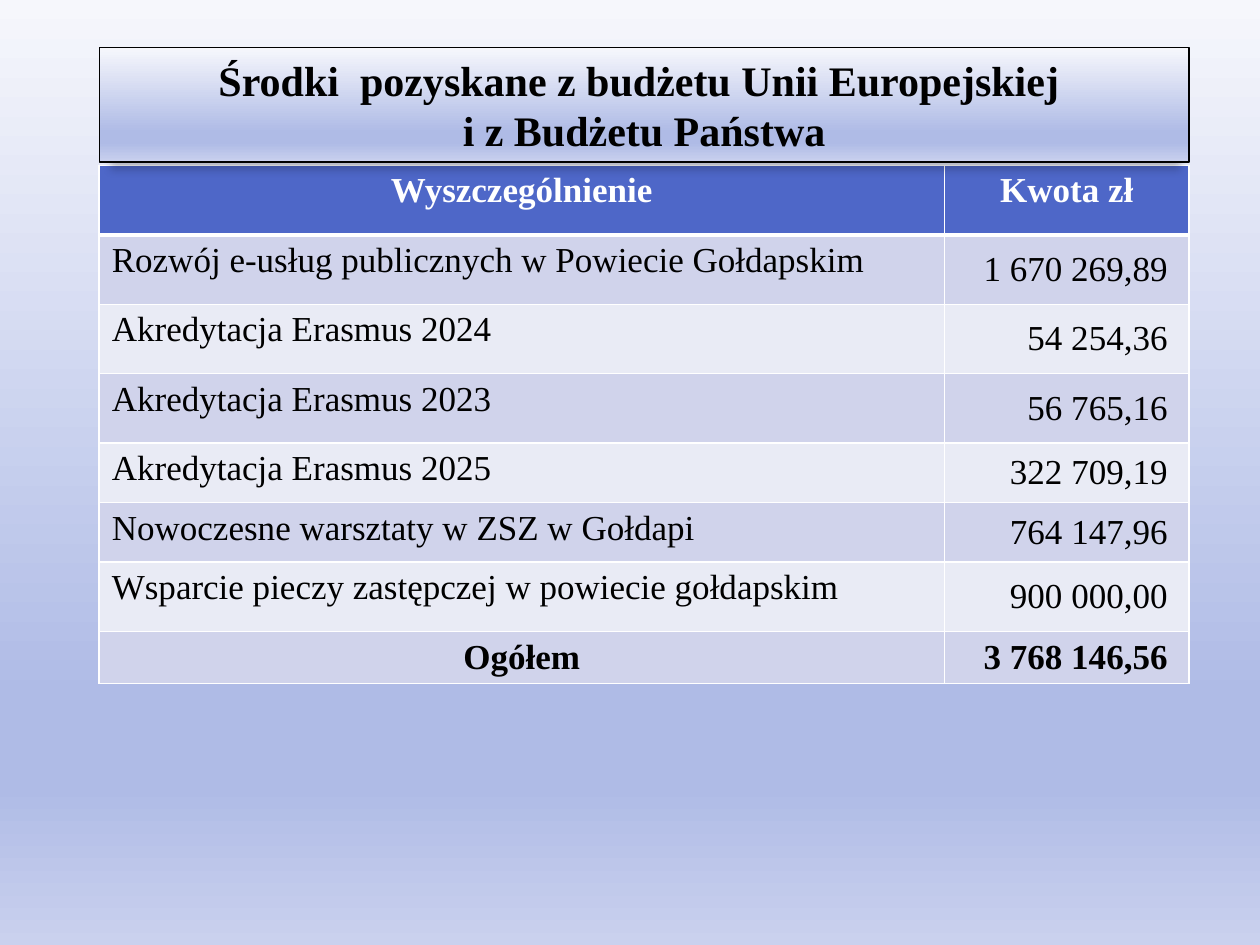
"""Build a slide listing funds obtained from the EU and state budgets."""
import pptx
import pptx.dml.color
import pptx.enum.shapes
import pptx.enum.text
import pptx.oxml
import pptx.oxml.ns
import pptx.util

Pt = pptx.util.Pt
RGBColor = pptx.dml.color.RGBColor
ALIGN = pptx.enum.text.PP_ALIGN
ANCHOR = pptx.enum.text.MSO_ANCHOR

TITLE = ("Środki  pozyskane z budżetu Unii Europejskiej ", "i z Budżetu Państwa")
ROWS = [
    ("Wyszczególnienie", "Kwota zł", 39.7),
    ("Rozwój e-usług publicznych w Powiecie Gołdapskim", "1 670 269,89 ", 39.7),
    ("Akredytacja Erasmus 2024", "54 254,36 ", 39.7),
    ("Akredytacja Erasmus 2023", "56 765,16 ", 39.7),
    ("Akredytacja Erasmus 2025", "322 709,19 ", 34),
    ("Nowoczesne warsztaty w ZSZ w Gołdapi", "764 147,96 ", 34),
    ("Wsparcie pieczy zastępczej w powiecie gołdapskim", "900 000,00 ", 39.7),
    ("Ogółem", "3 768 146,56 ", 29.7),
]
COLUMN_WIDTHS = (483, 139.8)
LEFT, TITLE_TOP, TITLE_HEIGHT, TABLE_TOP = 56.7, 27.2, 65.4, 94.5
FONT = "Times New Roman"
BLACK = RGBColor(0x00, 0x00, 0x00)
WHITE = RGBColor(0xFF, 0xFF, 0xFF)
HEADER_BLUE = RGBColor(0x4E, 0x67, 0xC8)
BANDS = (RGBColor(0xE9, 0xEB, 0xF5), RGBColor(0xD0, 0xD3, 0xEB))
GRADIENT = [
    (0, RGBColor(0xF6, 0xF7, 0xFC)),
    (74, RGBColor(0xAF, 0xBB, 0xE6)),
    (83, RGBColor(0xAF, 0xBB, 0xE6)),
    (100, RGBColor(0xCA, 0xD1, 0xEE)),
]
NAMESPACE = pptx.oxml.ns.nsdecls("a")


def apply_gradient(fill, owner):
    """Fill a shape or background with the vertical gradient."""
    fill.gradient()
    fill.gradient_angle = 270
    stops = next(owner.element.iter(pptx.oxml.ns.qn("a:gsLst")))
    for stop in list(stops):
        stops.remove(stop)
    for position, color in GRADIENT:
        stops.append(pptx.oxml.parse_xml(
            f'<a:gs {NAMESPACE} pos="{position * 1000}"><a:srgbClr val="{color}"/></a:gs>'))


def style_font(font, size, color, bold):
    """Set the typeface, size, colour and weight of a font."""
    font.name, font.size, font.bold = FONT, Pt(size), bold
    font.color.rgb = color


def add_borders(cell, row):
    """Draw white cell borders, thicker below the header row."""
    widths = {"L": 1, "R": 1, "T": 3 if row == 1 else 1, "B": 3 if row == 0 else 1}
    properties = cell._tc.get_or_add_tcPr()
    for side, width in widths.items():
        properties.append(pptx.oxml.parse_xml(
            f'<a:ln{side} {NAMESPACE} w="{Pt(width)}"><a:solidFill>'
            f'<a:srgbClr val="{WHITE}"/></a:solidFill></a:ln{side}>'))


def add_funds_table(page):
    """Add the table of projects and amounts."""
    table = page.shapes.add_table(
        len(ROWS), len(COLUMN_WIDTHS), Pt(LEFT), Pt(TABLE_TOP),
        Pt(sum(COLUMN_WIDTHS)), Pt(sum(row[-1] for row in ROWS))).table
    for column, width in zip(table.columns, COLUMN_WIDTHS):
        column.width = Pt(width)
    for row, (project, amount, height) in enumerate(ROWS):
        table.rows[row].height = Pt(height)
        header, total = row == 0, row == len(ROWS) - 1
        for column, text in enumerate((project, amount)):
            cell = table.cell(row, column)
            add_borders(cell, row)
            cell.fill.solid()
            cell.fill.fore_color.rgb = HEADER_BLUE if header else BANDS[row % 2]
            para = cell.text_frame.paragraphs[0]
            para.text = text
            style_font(para.runs[0].font, 20, WHITE if header else BLACK, header or total)
            if column and not header:
                para.alignment = ALIGN.RIGHT
                cell.vertical_anchor = ANCHOR.MIDDLE
            else:
                para.alignment = ALIGN.CENTER if header or total else ALIGN.LEFT


def add_title(page):
    """Add the shadowed title box."""
    box = page.shapes.add_shape(
        pptx.enum.shapes.MSO_SHAPE.RECTANGLE, Pt(LEFT), Pt(TITLE_TOP),
        Pt(sum(COLUMN_WIDTHS)), Pt(TITLE_HEIGHT))
    apply_gradient(box.fill, box)
    box.line.color.rgb = BLACK
    box.line.width = Pt(0.75)
    box.shadow.inherit = False
    effects = next(box.element.iter(pptx.oxml.ns.qn("a:effectLst")))
    effects.append(pptx.oxml.parse_xml(
        f'<a:outerShdw {NAMESPACE} blurRad="{Pt(5)}" dist="{Pt(4)}" dir="5400000" '
        f'sx="98000" sy="98000" algn="ctr" rotWithShape="0"><a:srgbClr val="{BLACK}">'
        '<a:alpha val="20000"/></a:srgbClr></a:outerShdw>'))
    frame = box.text_frame
    frame.word_wrap = True
    frame.auto_size = pptx.enum.text.MSO_AUTO_SIZE.SHAPE_TO_FIT_TEXT
    frame.vertical_anchor = ANCHOR.MIDDLE
    para = frame.paragraphs[0]
    para.alignment = ALIGN.CENTER
    para.text = TITLE[0]
    para.add_line_break()
    para.add_run().text = TITLE[1]
    style_font(para.font, 24, BLACK, True)
    for span in para.runs:
        style_font(span.font, 24, BLACK, True)


def main():
    """Assemble and save the deck."""
    deck = pptx.Presentation()
    deck.slide_width, deck.slide_height = Pt(720), Pt(540)
    page = deck.slides.add_slide(deck.slide_layouts[6])
    apply_gradient(page.background.fill, page)
    add_funds_table(page)
    add_title(page)
    deck.save("out.pptx")


if __name__ == "__main__":
    main()
